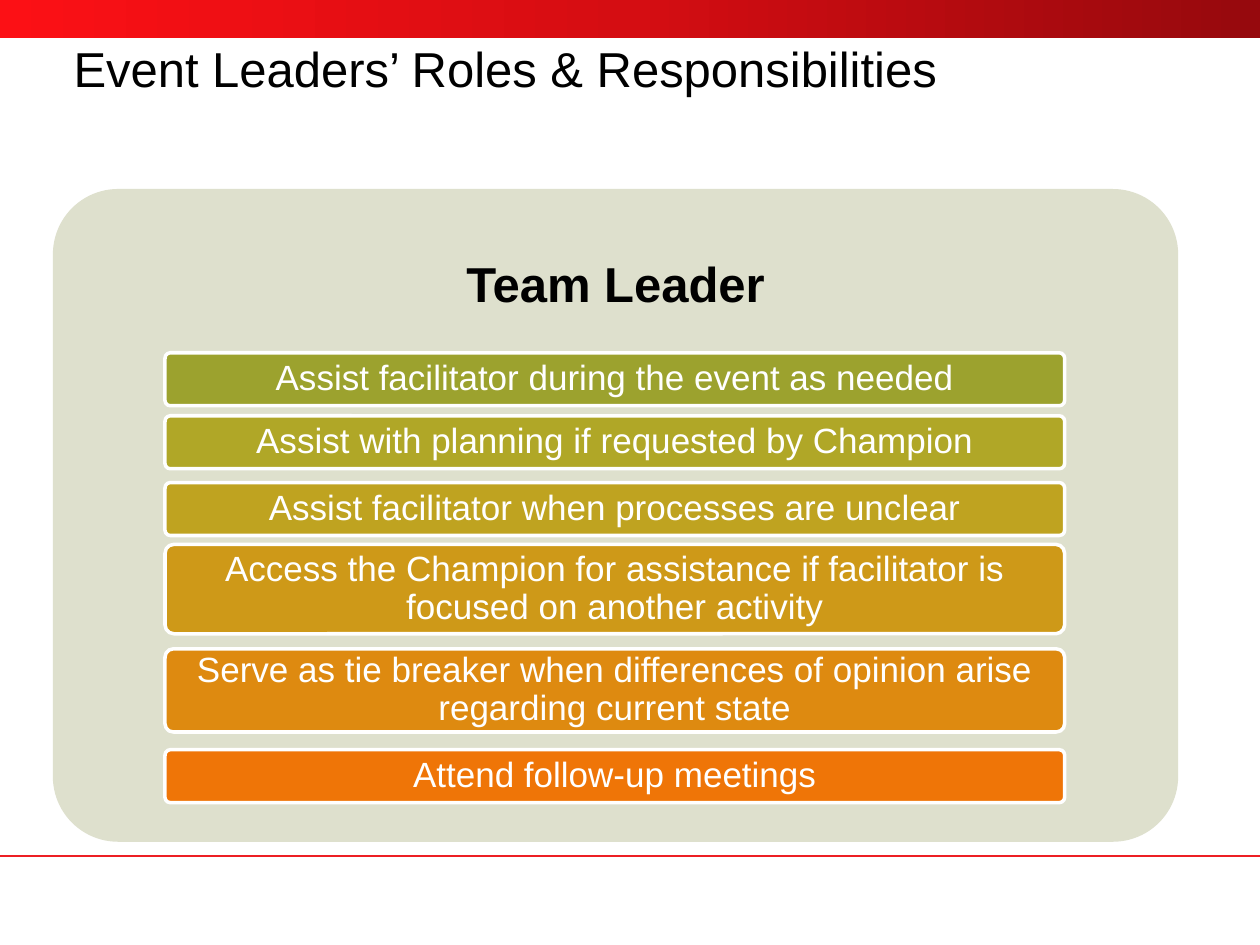
import copy
from dataclasses import dataclass

import lxml.etree
import pptx
import pptx.dml.color
import pptx.enum.dml
import pptx.enum.shapes
import pptx.enum.text
import pptx.oxml.ns
import pptx.util

Pt = pptx.util.Pt
SHAPE = pptx.enum.shapes.MSO_SHAPE
ANCHOR = pptx.enum.text.MSO_ANCHOR
ALIGN = pptx.enum.text.PP_ALIGN

COLORS = {
    "text": "000000",
    "white": "FFFFFF",
    "rule": "ED1F24",
    "panel": "DEE0CD",
    "band_dark": "96090D",
    "band_mid": "D50D12",
    "band_bright": "FC1015",
    "olive": "9CA22E",
    "moss": "B0A727",
    "mustard": "BFA320",
    "gold": "CE9918",
    "amber": "DE8A10",
    "orange": "EF7507",
}
WIDTH, HEIGHT = 720, 540
BAR_LEFT, BAR_WIDTH = 94.32, 514.08
ONE_LINE = 30.24


@dataclass
class Bar:
    text: str
    color: str
    top: float
    height: float = ONE_LINE


BARS = [
    Bar("Assist facilitator during the event as needed", "olive", 201.6),
    Bar("Assist with planning if requested by Champion", "moss", 237.6),
    Bar("Assist facilitator when processes are unclear", "mustard", 275.76),
    Bar("Access the Champion for assistance if facilitator is focused on another activity",
        "gold", 311.04, 51.12),
    Bar("Serve as tie breaker when differences of opinion arise regarding current state",
        "amber", 370.8, 47.52),
    Bar("Attend follow-up meetings", "orange", 428.4),
]


def rgb(name: str) -> pptx.dml.color.RGBColor:
    return pptx.dml.color.RGBColor.from_string(COLORS[name])


def set_attrs(obj, values: dict) -> None:
    for name, value in values.items():
        setattr(obj, name, value)


def write(sp, text: str, size: float, color: str, align, anchor,
          inset_x: float = 0, inset_y: float = 0, bold: bool = False) -> None:
    tf = sp.text_frame
    set_attrs(tf, {
        "word_wrap": True,
        "auto_size": pptx.enum.text.MSO_AUTO_SIZE.NONE,
        "vertical_anchor": anchor,
        "margin_left": Pt(inset_x), "margin_right": Pt(inset_x),
        "margin_top": Pt(inset_y), "margin_bottom": Pt(inset_y),
    })
    p = tf.paragraphs[0]
    set_attrs(p, {"alignment": align, "line_spacing": 0.9})
    r = p.add_run()
    r.text = text
    set_attrs(r.font, {"name": "Arial", "size": Pt(size), "bold": bold})
    r.font.color.rgb = rgb(color)


def add_box(s, kind, left: float, top: float, width: float, height: float):
    sp = s.shapes.add_shape(kind, Pt(left), Pt(top), Pt(width), Pt(height))
    sp.shadow.inherit = False
    sp.line.fill.background()
    return sp


def add_rounded(s, left: float, top: float, width: float, height: float, color: str):
    sp = add_box(s, SHAPE.ROUNDED_RECTANGLE, left, top, width, height)
    sp.adjustments[0] = 0.1
    sp.fill.solid()
    sp.fill.fore_color.rgb = rgb(color)
    return sp


def add_band(s) -> None:
    sp = add_box(s, SHAPE.RECTANGLE, 0, 0, WIDTH, 22)
    sp.fill.gradient()
    sp.fill.gradient_angle = 180
    stops = sp._element.spPr.find(".//" + pptx.oxml.ns.qn("a:gsLst"))
    stops.insert(1, copy.deepcopy(stops[0]))
    names = ("band_dark", "band_mid", "band_bright")
    for stop, name, position in zip(sp.fill.gradient_stops, names, (0, 0.5, 1)):
        stop.color.rgb = rgb(name)
        stop.position = position


def add_rule(s, y: float) -> None:
    line = s.shapes.add_connector(pptx.enum.shapes.MSO_CONNECTOR.STRAIGHT,
                                  0, Pt(y), Pt(WIDTH), Pt(y))
    line.line.color.rgb = rgb("rule")
    line.line.width = Pt(1)
    lxml.etree.SubElement(line._element.spPr, pptx.oxml.ns.qn("a:effectLst"))


def add_bar(s, bar: Bar) -> None:
    sp = add_rounded(s, BAR_LEFT, bar.top, BAR_WIDTH, bar.height, bar.color)
    sp.line.color.rgb = rgb("white")
    sp.line.width = Pt(2)
    write(sp, bar.text, 20, "white", ALIGN.CENTER, ANCHOR.MIDDLE, 4.5, 3)


def main() -> None:
    prs = pptx.Presentation()
    set_attrs(prs, {"slide_width": Pt(WIDTH), "slide_height": Pt(HEIGHT)})
    s = prs.slides.add_slide(prs.slide_layouts[5])

    add_band(s)
    add_rule(s, 489)

    title = s.shapes.title
    set_attrs(title, {"left": Pt(42), "top": Pt(26), "width": Pt(576), "height": Pt(66)})
    write(title, "Event Leaders’ Roles & Responsibilities", 28, "text", ALIGN.LEFT, ANCHOR.TOP)

    add_rounded(s, 30.24, 108, 643, 373, "panel")
    heading = s.shapes.add_textbox(Pt(30.24), Pt(108), Pt(643), Pt(111.6))
    write(heading, "Team Leader", 28, "text", ALIGN.CENTER, ANCHOR.MIDDLE, 8.4, 8.4, bold=True)

    for bar in BARS:
        add_bar(s, bar)

    prs.save("out.pptx")


if __name__ == "__main__":
    main()
